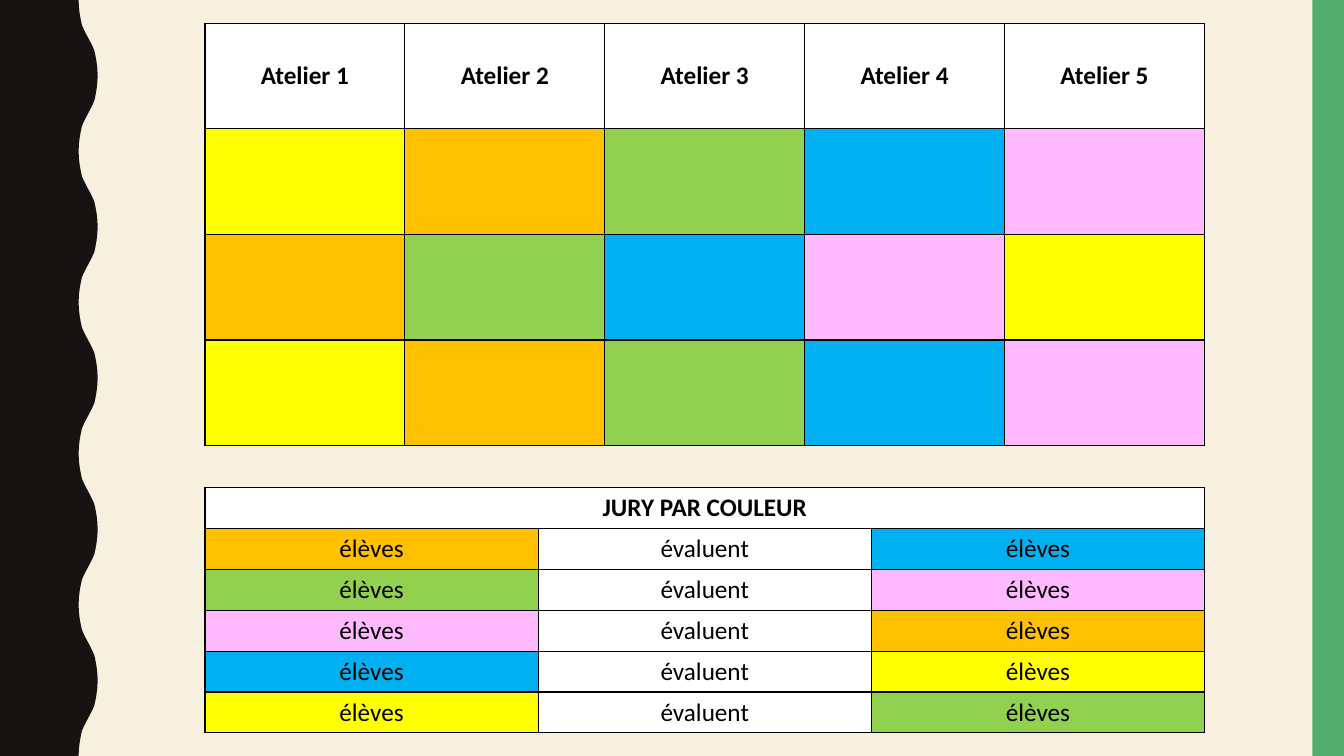
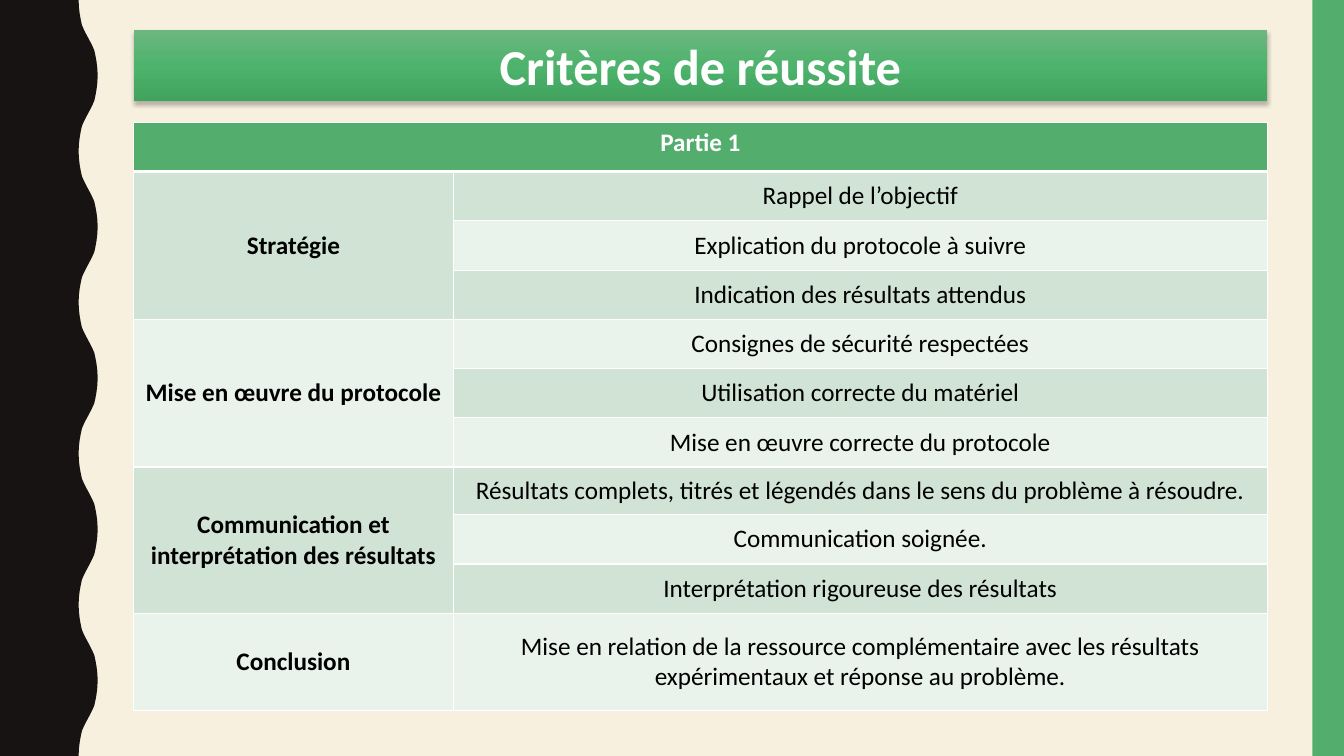
from pptx import Presentation
from pptx.dml.color import RGBColor
from pptx.enum import shapes, text
from pptx.oxml import parse_xml
from pptx.oxml.ns import nsdecls
from pptx.util import Pt

FONT = "Calibri"
W, H = 960, 540
C = {
    "cream": "F7F0DF", "dark": "171312", "green": "53AE6E",
    "black": "000000", "white": "FFFFFF",
    "yellow": "FFFF00", "orange": "FFC000", "lime": "92D050",
    "blue": "00B0F0", "pink": "FFBAFF",
    "band": "D1E3D5", "pale": "E9F2EB",
}

TEAMS = ["yellow", "orange", "lime", "blue", "pink"]
ROTATIONS = [0, 1, 0]
JURY_TITLE = "JURY PAR COULEUR"
JURY = [
    ("orange", "blue"),
    ("lime", "pink"),
    ("pink", "orange"),
    ("blue", "yellow"),
    ("yellow", "lime"),
]

TITLE = "Critères de réussite"
TITLE_GRADIENT = [(0, "6CB780"), (50, "4EB36C"), (100, "42A35E")]
PART = "Partie 1"
CRITERIA = [
    ("Stratégie", [
        "Rappel de l’objectif",
        "Explication du protocole à suivre",
        "Indication des résultats attendus",
    ]),
    ("Mise en œuvre du protocole", [
        "Consignes de sécurité respectées",
        "Utilisation correcte du matériel",
        "Mise en œuvre correcte du protocole",
    ]),
    ("Communication et interprétation des résultats", [
        "Résultats complets, titrés et légendés dans le sens du problème à résoudre.",
        "Communication soignée.",
        "Interprétation rigoureuse des résultats",
    ]),
    ("Conclusion", [
        "Mise en relation de la ressource complémentaire avec les résultats "
        "expérimentaux et réponse au problème.",
    ]),
]
CRITERIA_ROWS = [35.2] * 7 + [34, 35.2, 35.2, 69.4]

WAVE_X, WAVE_W, WAVE_PERIOD = 56.2, 13.6, 108
WAVE_QUARTER = [(0, 0), (0.2, 5), (0.8, 10), (1.6, 14.4), (2.4, 18), (3.7, 21), (5.2, 24)]


def rgb(name):
    return RGBColor.from_string(C[name])


def write(tf, content, size=18, color="black", bold=False):
    p = tf.paragraphs[0]
    p.alignment = text.PP_ALIGN.CENTER
    r = p.add_run()
    r.text = content
    r.font.name = FONT
    r.font.size = Pt(size)
    r.font.bold = bold
    r.font.color.rgb = rgb(color)


def paint(sp, color):
    sp.fill.solid()
    sp.fill.fore_color.rgb = rgb(color)
    sp.line.fill.background()
    sp.shadow.inherit = False


def wave_points():
    half_period = WAVE_PERIOD / 2
    rise = WAVE_QUARTER + [(WAVE_W / 2, half_period / 2)]
    rise += [(WAVE_W - x, half_period - y) for x, y in reversed(WAVE_QUARTER)]
    period = rise + [(x, WAVE_PERIOD - y) for x, y in rise[-2::-1]]
    return [(WAVE_X + x, n * WAVE_PERIOD + y)
            for n in range(H // WAVE_PERIOD) for x, y in period]


def new_slide(prs):
    s = prs.slides.add_slide(prs.slide_layouts[6])
    outline = wave_points() + [(0, H)]
    wave = s.shapes.build_freeform(0, 0, scale=1.0)
    wave.add_line_segments([(Pt(x), Pt(y)) for x, y in outline], close=True)
    paint(wave.convert_to_shape(), "dark")
    band = s.shapes.add_shape(shapes.MSO_SHAPE.RECTANGLE, Pt(937.5), 0, Pt(W - 937.5), Pt(H))
    paint(band, "green")
    return s


def set_borders(cell, color, widths):
    tcPr = cell._tc.get_or_add_tcPr()
    for side in "LRTB":
        tcPr.append(parse_xml(
            f'<a:ln{side} {nsdecls("a")} w="{Pt(widths.get(side, 1))}">'
            f'<a:solidFill><a:srgbClr val="{C[color]}"/></a:solidFill></a:ln{side}>'))


def add_grid(s, left, top, cols, rows, border, heavy_below_header=False):
    frame = s.shapes.add_table(len(rows), len(cols), Pt(left), Pt(top),
                               Pt(sum(cols)), Pt(sum(rows)))
    table = frame.table
    table.first_row = table.horz_banding = False
    for col, width in zip(table.columns, cols):
        col.width = Pt(width)
    for i, height in enumerate(rows):
        table.rows[i].height = Pt(height)
        heavy = {0: {"B": 3}, 1: {"T": 3}}.get(i, {}) if heavy_below_header else {}
        for cell in table.rows[i].cells:
            set_borders(cell, border, heavy)
    return table


def fill_cell(cell, fill, content="", anchor=text.MSO_ANCHOR.MIDDLE, **fmt):
    cell.fill.solid()
    cell.fill.fore_color.rgb = rgb(fill)
    cell.vertical_anchor = anchor
    if content:
        write(cell.text_frame, content, **fmt)


def workshops_slide(prs):
    s = new_slide(prs)
    left, width = 146.4, 714
    n = len(TEAMS)
    table = add_grid(s, left, 16.7, [width / n] * n, [75.4] * (1 + len(ROTATIONS)), "black")
    for j in range(n):
        fill_cell(table.cell(0, j), "white", f"Atelier {j + 1}", bold=True)
        for i, shift in enumerate(ROTATIONS, 1):
            fill_cell(table.cell(i, j), TEAMS[(j + shift) % n])

    table = add_grid(s, left, 348.3, [width / 3] * 3, [29.2] * (1 + len(JURY)), "black")
    table.cell(0, 0).merge(table.cell(0, 2))
    fill_cell(table.cell(0, 0), "white", JURY_TITLE, bold=True)
    for i, (judges, judged) in enumerate(JURY, 1):
        row = [(judges, "élèves"), ("white", "évaluent"), (judged, "élèves")]
        for j, (fill, content) in enumerate(row):
            fill_cell(table.cell(i, j), fill, content)


def add_title(s, left, width):
    sp = s.shapes.add_shape(shapes.MSO_SHAPE.RECTANGLE, Pt(left), Pt(21.4), Pt(width), Pt(50.9))
    paint(sp, "green")
    sp.fill.gradient()
    sp.fill.gradient_angle = 270
    stops = sp._element.spPr.xpath("a:gradFill/a:gsLst")[0]
    for stop in list(stops):
        stops.remove(stop)
    for pos, color in TITLE_GRADIENT:
        stops.append(parse_xml(
            f'<a:gs {nsdecls("a")} pos="{pos * 1000}"><a:srgbClr val="{color}"/></a:gs>'))
    sp._element.spPr.xpath("a:effectLst")[0].append(parse_xml(
        f'<a:outerShdw {nsdecls("a")} blurRad="{Pt(3)}" dist="{Pt(2)}" dir="5400000" '
        f'rotWithShape="0"><a:srgbClr val="{C["black"]}"><a:alpha val="25000"/>'
        '</a:srgbClr></a:outerShdw>'))
    tf = sp.text_frame
    tf.word_wrap = True
    tf.auto_size = text.MSO_AUTO_SIZE.SHAPE_TO_FIT_TEXT
    tf.vertical_anchor = text.MSO_ANCHOR.TOP
    write(tf, TITLE, size=36, color="white", bold=True)


def criteria_slide(prs):
    s = new_slide(prs)
    left, cols = 95.4, [228.4, 581.4]
    add_title(s, left, sum(cols))
    table = add_grid(s, left, 87.4, cols, CRITERIA_ROWS, "white", heavy_below_header=True)
    table.cell(0, 0).merge(table.cell(0, 1))
    fill_cell(table.cell(0, 0), "green", PART, anchor=text.MSO_ANCHOR.TOP,
              color="white", bold=True)
    bands = ["pale", "band"]
    i = 1
    for skill, items in CRITERIA:
        if len(items) > 1:
            table.cell(i, 0).merge(table.cell(i + len(items) - 1, 0))
        fill_cell(table.cell(i, 0), bands[i % 2], skill, bold=True)
        for item in items:
            fill_cell(table.cell(i, 1), bands[i % 2], item)
            i += 1


def main():
    prs = Presentation()
    prs.slide_width, prs.slide_height = Pt(W), Pt(H)
    background = prs.slide_master.background.fill
    background.solid()
    background.fore_color.rgb = rgb("cream")
    workshops_slide(prs)
    criteria_slide(prs)
    prs.save("out.pptx")


if __name__ == "__main__":
    main()
